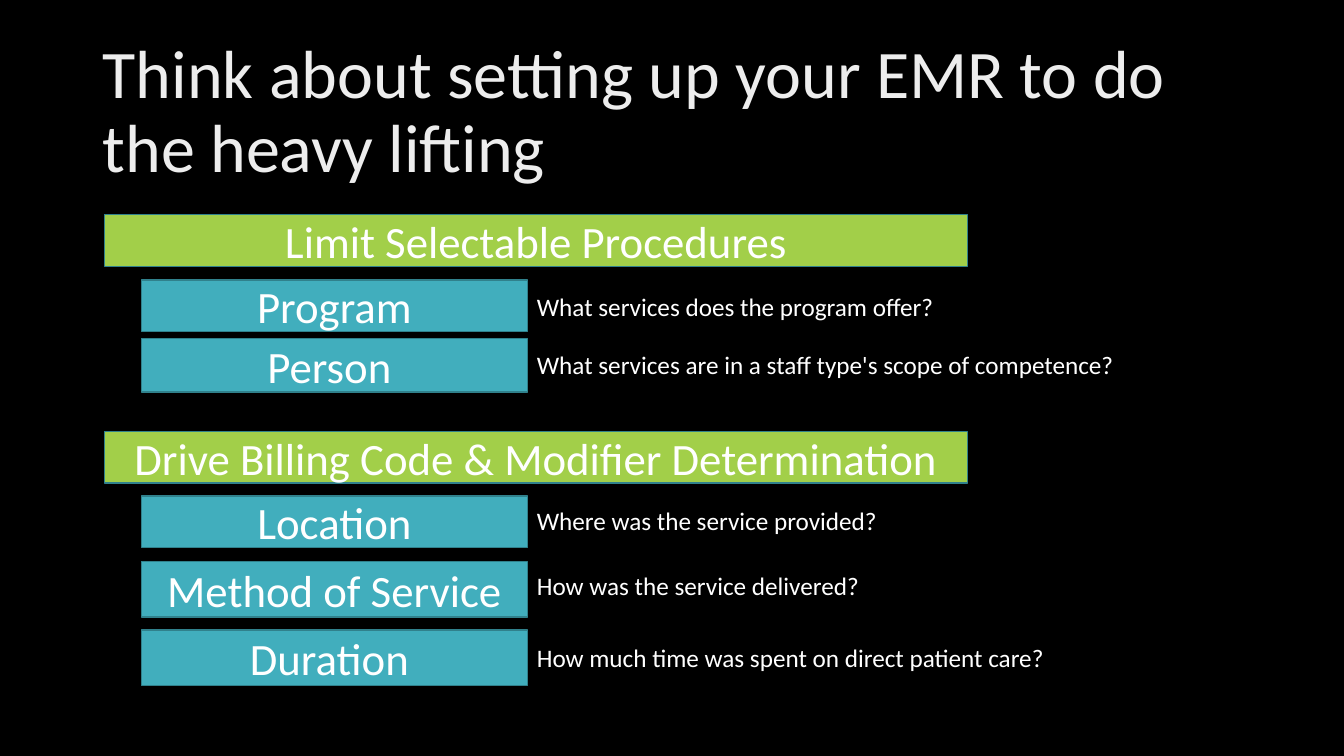
from pptx import Presentation
from pptx.dml.color import RGBColor
from pptx.enum.shapes import MSO_SHAPE
from pptx.enum.text import MSO_ANCHOR, PP_ALIGN
from pptx.util import Cm, Pt


def color(hex_value):
    return RGBColor.from_string(hex_value)


def add_text(text, left, top, width, height, size=18, ink="FFFFFF", fill=None,
             align=PP_ALIGN.LEFT, anchor=MSO_ANCHOR.TOP, spacing=None):
    place = [Cm(value) for value in (left, top, width, height)]
    if fill:
        box = slide.shapes.add_shape(MSO_SHAPE.RECTANGLE, *place)
        box.shadow.inherit = False
        box.fill.solid()
        box.fill.fore_color.rgb = color(fill)
        box.line.color.rgb = color("30818C")
        box.line.width = Pt(1)
    else:
        box = slide.shapes.add_textbox(*place)
    frame = box.text_frame
    frame.word_wrap = True
    frame.vertical_anchor = anchor
    paragraph = frame.paragraphs[0]
    paragraph.alignment = align
    paragraph.line_spacing = spacing
    run = paragraph.add_run()
    run.text = text
    run.font.name = "Calibri"
    run.font.size = Pt(size)
    run.font.color.rgb = color(ink)


deck = Presentation()
deck.slide_width, deck.slide_height = Cm(33.87), Cm(19.05)
slide = deck.slides.add_slide(deck.slide_layouts[6])
slide.background.fill.solid()
slide.background.fill.fore_color.rgb = color("000000")

# Title
add_text("Think about setting up your EMR to do the heavy lifting",
         2.34, 1.02, 29.21, 3.68, size=48.6, ink="EDEDED",
         anchor=MSO_ANCHOR.MIDDLE, spacing=0.9)

# Each goal: heading, top, then (factor, top, height, question, question top)
goals = [
    ("Limit Selectable Procedures", 5.41, [
        ("Program", 7.06, 1.3, "What services does the program offer?", 7.21),
        ("Person ", 8.53, 1.35,
         "What services are in a staff type's scope of competence?", 8.69),
    ]),
    ("Drive Billing Code & Modifier Determination", 10.87, [
        ("Location", 12.5, 1.3, "Where was the service provided?", 12.62),
        ("Method of Service", 14.15, 1.4, "How was the service delivered?", 14.25),
        ("Duration ", 15.88, 1.4,
         "How much time was spent on direct patient care?", 16.05),
    ]),
]
bar = dict(size=32, align=PP_ALIGN.CENTER, anchor=MSO_ANCHOR.MIDDLE)

# Green headings, teal factors and the question beside each factor
for heading, heading_top, factors in goals:
    add_text(heading, 2.64, heading_top, 21.74, 1.3, fill="A2CF49", **bar)
    for factor, factor_top, factor_height, question, question_top in factors:
        add_text(factor, 3.57, factor_top, 9.72, factor_height, fill="41AEBD", **bar)
        add_text(question, 13.28, question_top, 17.68, 1.02)

deck.save("out.pptx")
